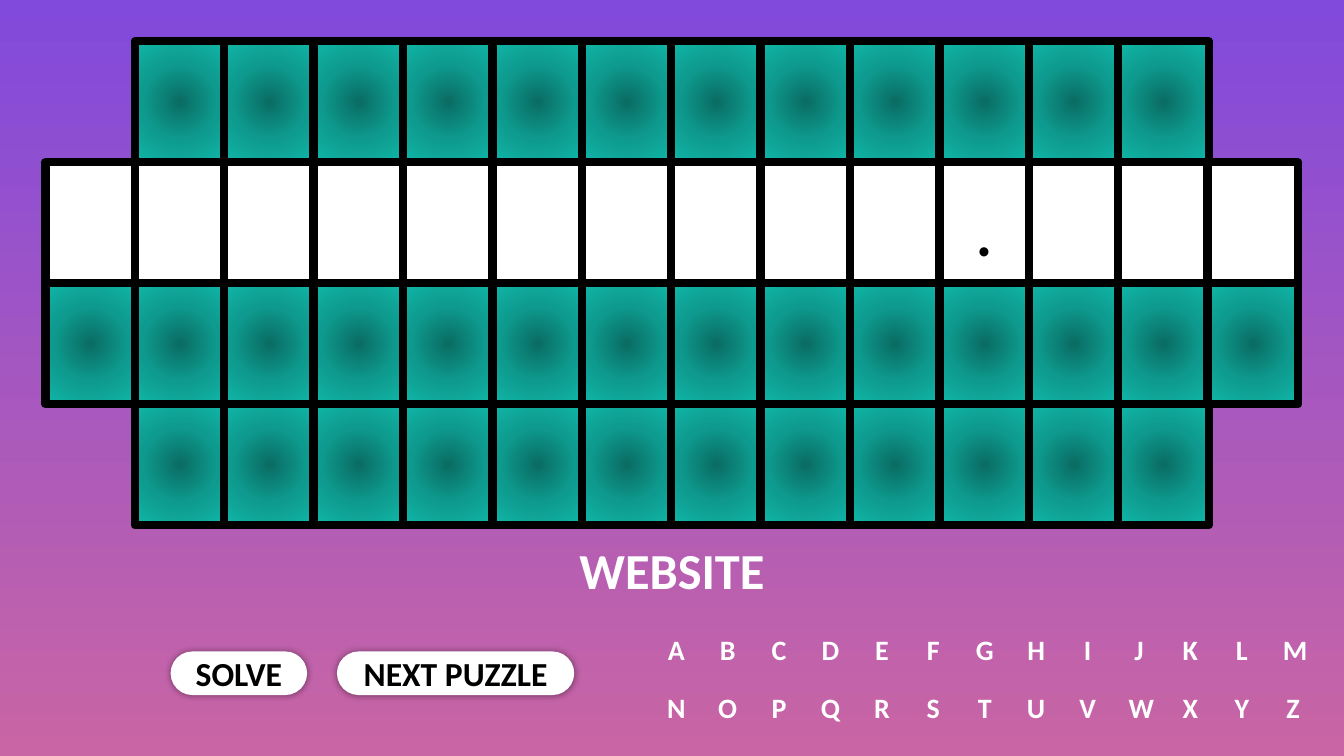
from dataclasses import dataclass

from pptx import Presentation
from pptx.dml.color import RGBColor
from pptx.enum.shapes import MSO_SHAPE
from pptx.enum.text import MSO_ANCHOR, MSO_AUTO_SIZE, PP_ALIGN
from pptx.oxml import parse_xml
from pptx.oxml.ns import nsdecls, qn
from pptx.util import Pt

RECTANGLE = MSO_SHAPE.RECTANGLE
PILL = MSO_SHAPE.ROUNDED_RECTANGLE
MIDDLE = MSO_ANCHOR.MIDDLE
NO_AUTOFIT = MSO_AUTO_SIZE.NONE
CENTER = PP_ALIGN.CENTER

CATEGORY = "WEBSITE"
BOARD = [
    " ############ ",
    "__________.___",
    "##############",
    " ############ ",
]
ALPHABET = ["ABCDEFGHIJKLM", "NOPQRSTUVWXYZ"]
BUTTONS = [("SOLVE", 122.4, 96.5), ("NEXT PUZZLE", 241.2, 168.5)]


@dataclass(frozen=True)
class Theme:
    sky_top: str = "8149DC"
    sky_bottom: str = "C965A4"
    teal_stops: tuple = ((0, "0A6C63"), (50, "0E9A8E"), (100, "10B7A8"))
    white: str = "FFFFFF"
    black: str = "000000"
    tile_font: str = "Montserrat"
    label_font: str = "Calibri"
    tile_size: float = 60
    category_size: float = 36
    button_size: float = 24
    letter_size: float = 20


THEME = Theme()
SLIDE_W, SLIDE_H = 960, 540
BOARD_LEFT, BOARD_TOP = 32.4, 29.5
TILE_W, TILE_H = 64.8, 86.4
TILE_STEP = 63.86
LETTERS_LEFT, LETTERS_TOP = 468.7, 441.4
LETTER_W, LETTER_H = 28.8, 44.6
LETTER_STEP, LETTER_ROW_STEP = 36.72, 41.8
CATEGORY_TOP = 384.5
BUTTON_TOP, BUTTON_H = 465.8, 30.2


def rgb(color):
    return RGBColor.from_string(color)


def write(frame, words, size, color, font, bold=True):
    frame.word_wrap = True
    frame.auto_size = NO_AUTOFIT
    frame.vertical_anchor = MIDDLE
    paragraph = frame.paragraphs[0]
    paragraph.alignment = CENTER
    run = paragraph.add_run()
    run.text = words
    run.font.size = Pt(size)
    run.font.name = font
    run.font.bold = bold
    run.font.color.rgb = rgb(color)


def add_panel(slide, kind, box, outline, weight):
    panel = slide.shapes.add_shape(kind, *map(Pt, box))
    panel.shadow.inherit = False
    panel.fill.solid()
    panel.fill.fore_color.rgb = rgb(THEME.white)
    panel.line.color.rgb = rgb(outline)
    panel.line.width = Pt(weight)
    return panel


def fill_teal(tile):
    stops = "".join(
        f'<a:gs pos="{place * 1000}"><a:srgbClr val="{color}"/></a:gs>'
        for place, color in THEME.teal_stops
    )
    glow = parse_xml(
        f'<a:gradFill {nsdecls("a")} rotWithShape="1"><a:gsLst>{stops}</a:gsLst>'
        '<a:path path="circle"><a:fillToRect l="50000" t="50000" r="50000" b="50000"/>'
        "</a:path></a:gradFill>"
    )
    properties = tile._element.spPr
    properties.replace(properties.find(qn("a:solidFill")), glow)


def add_soft_shadow(button):
    effects = button._element.spPr.find(qn("a:effectLst"))
    effects.append(parse_xml(
        f'<a:outerShdw {nsdecls("a")} blurRad="{Pt(5)}" dist="0" dir="0" algn="ctr">'
        f'<a:srgbClr val="{THEME.black}"><a:alpha val="40000"/></a:srgbClr></a:outerShdw>'
    ))


def add_board(slide):
    for row, marks in enumerate(BOARD):
        for column, mark in enumerate(marks):
            if mark == " ":
                continue
            box = (BOARD_LEFT + column * TILE_STEP, BOARD_TOP + row * TILE_H, TILE_W, TILE_H)
            tile = add_panel(slide, RECTANGLE, box, THEME.black, 6)
            if mark == "#":
                fill_teal(tile)
            elif mark != "_":
                write(tile.text_frame, mark, THEME.tile_size, THEME.black, THEME.tile_font, False)


def add_alphabet(slide):
    for row, letters in enumerate(ALPHABET):
        for column, letter in enumerate(letters):
            box = (LETTERS_LEFT + column * LETTER_STEP, LETTERS_TOP + row * LETTER_ROW_STEP,
                   LETTER_W, LETTER_H)
            label = slide.shapes.add_textbox(*map(Pt, box))
            write(label.text_frame, letter, THEME.letter_size, THEME.white, THEME.label_font)


def add_buttons(slide):
    for words, left, width in BUTTONS:
        button = add_panel(slide, PILL, (left, BUTTON_TOP, width, BUTTON_H), THEME.white, 1)
        button.adjustments[0] = 0.5
        add_soft_shadow(button)
        write(button.text_frame, words, THEME.button_size, THEME.black, THEME.label_font)


def main():
    deck = Presentation()
    deck.slide_width, deck.slide_height = Pt(SLIDE_W), Pt(SLIDE_H)
    slide = deck.slides.add_slide(deck.slide_layouts[5])

    sky = slide.background.fill
    sky.gradient()
    sky.gradient_angle = 270
    for stop, color in zip(sky.gradient_stops, (THEME.sky_top, THEME.sky_bottom)):
        stop.color.rgb = rgb(color)

    category = slide.shapes.title
    category.left, category.top = Pt(0), Pt(CATEGORY_TOP)
    category.width, category.height = Pt(SLIDE_W), Pt(LETTER_H)
    write(category.text_frame, CATEGORY, THEME.category_size, THEME.white, THEME.label_font)

    add_board(slide)
    add_alphabet(slide)
    add_buttons(slide)
    deck.save("out.pptx")


if __name__ == "__main__":
    main()
